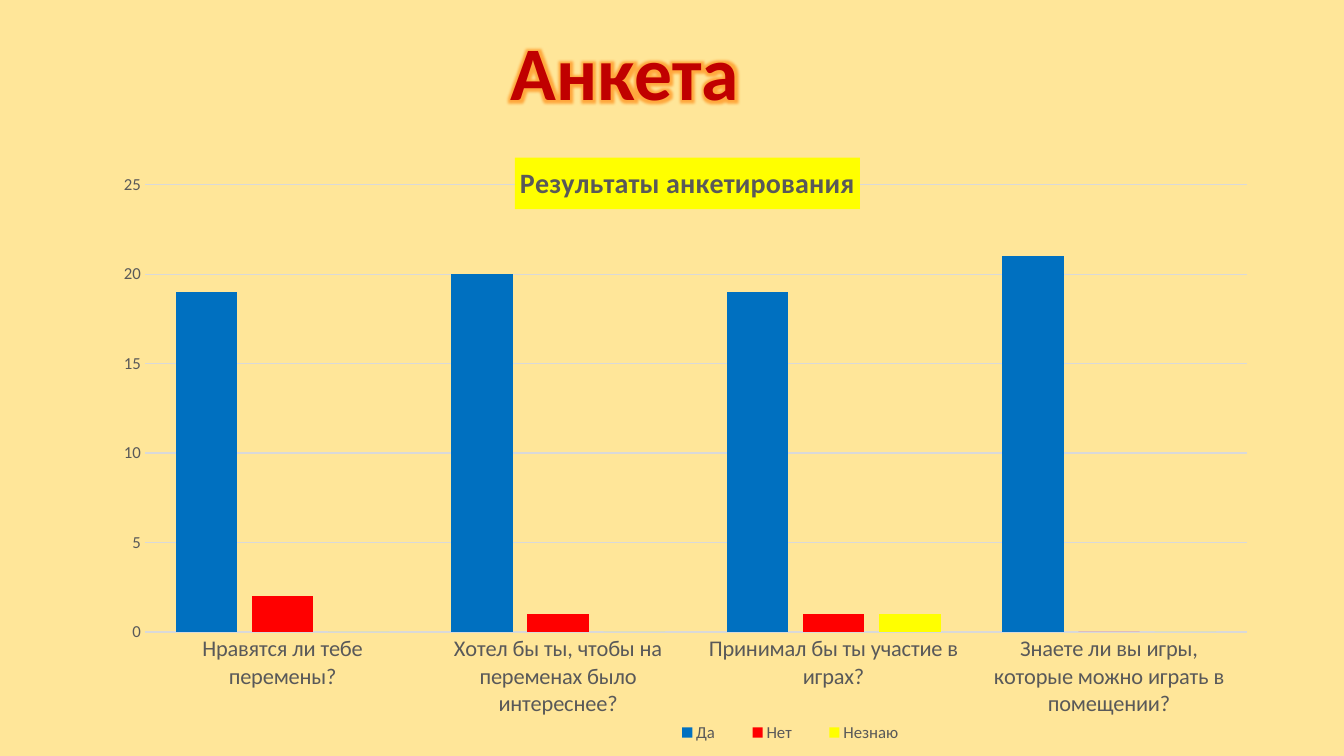
from dataclasses import dataclass

from lxml.etree import Element, SubElement
from pptx import Presentation
from pptx.chart.chart import Chart
from pptx.chart.data import CategoryChartData
from pptx.dml.color import RGBColor
from pptx.enum.chart import XL_CHART_TYPE as ChartType
from pptx.enum.chart import XL_LEGEND_POSITION as LegendPosition
from pptx.enum.chart import XL_TICK_MARK as TickMark
from pptx.enum.text import MSO_ANCHOR as Anchor
from pptx.enum.text import MSO_AUTO_SIZE as AutoSize
from pptx.enum.text import PP_ALIGN as Align
from pptx.oxml import parse_xml
from pptx.oxml.ns import nsdecls, qn
from pptx.slide import Slide
from pptx.util import Pt

FONT = "Calibri"
GREY = "595959"
RULE = "D9D9D9"


@dataclass
class Answer:
    name: str
    votes: tuple[int, ...]
    color: str


@dataclass
class Frame:
    left: float
    top: float
    width: float | None = None
    height: float | None = None
    inner: bool = False


QUESTIONS = (
    "Нравятся ли тебе перемены?",
    "Хотел бы ты, чтобы на переменах было интереснее?",
    "Принимал бы ты участие в играх?",
    "Знаете ли вы игры, которые можно играть в помещении?",
)
ANSWERS = (
    Answer("Да", (19, 20, 19, 21), "0070C0"),
    Answer("Нет", (2, 1, 1, 0), "FF0000"),
    Answer("Незнаю", (0, 0, 1, 0), "FFFF00"),
)


def paint(fill, color: str) -> None:
    fill.solid()
    fill.fore_color.rgb = RGBColor.from_string(color)


def set_font(font, size: float, color: str, bold: bool = False) -> None:
    font.name = FONT
    font.size = Pt(size)
    font.bold = bold
    font.color.rgb = RGBColor.from_string(color)


def set_line(line, color: str, width: float) -> None:
    paint(line.fill, color)
    line.width = Pt(width)


def set_layout(parent, index: int, frame: Frame) -> None:
    for old in parent.findall(qn("c:layout")):
        parent.remove(old)
    layout = Element(qn("c:layout"))
    manual = SubElement(layout, qn("c:manualLayout"))
    entries = {"xMode": "edge", "yMode": "edge", "x": frame.left, "y": frame.top}
    if frame.inner:
        entries = {"layoutTarget": "inner", **entries}
    if frame.width is not None:
        entries |= {"w": frame.width, "h": frame.height}
    for tag, value in entries.items():
        SubElement(manual, qn(f"c:{tag}")).set("val", str(value))
    parent.insert(index, layout)


def add_heading(page: Slide) -> None:
    box = page.shapes.title
    box.left, box.top, box.width, box.height = Pt(121.7), Pt(14.4), Pt(649.4), Pt(72.7)
    frame = box.text_frame
    frame.word_wrap = False
    frame.auto_size = AutoSize.SHAPE_TO_FIT_TEXT
    frame.vertical_anchor = Anchor.TOP
    para = frame.paragraphs[0]
    para.alignment = Align.CENTER
    para.line_spacing = 1.0
    span = para.add_run()
    span.text = "Анкета"
    set_font(span.font, 54, "C00000", bold=True)
    properties = span.font._element
    outline = parse_xml(
        f'<a:ln {nsdecls("a")} w="9525"><a:solidFill>'
        '<a:srgbClr val="FFFFFF"/></a:solidFill></a:ln>'
    )
    glow = parse_xml(
        f'<a:effectLst {nsdecls("a")}><a:glow rad="101600">'
        '<a:srgbClr val="FF8000"><a:alpha val="60000"/></a:srgbClr>'
        "</a:glow></a:effectLst>"
    )
    properties.insert(0, outline)
    properties.find(qn("a:solidFill")).addnext(glow)


def add_survey(page: Slide) -> Chart:
    data = CategoryChartData()
    data.categories = QUESTIONS
    for answer in ANSWERS:
        data.add_series(answer.name, answer.votes)
    chart = page.shapes.add_chart(
        ChartType.COLUMN_CLUSTERED, Pt(78.5), Pt(99.4), Pt(833.8), Pt(440.6), data
    ).chart
    set_font(chart.font, 10, "000000")
    plot = chart.plots[0]
    plot.gap_width = 100
    plot.overlap = -24
    plot.vary_by_categories = False
    for series, answer in zip(plot.series, ANSWERS):
        paint(series.format.fill, answer.color)
        series.invert_if_negative = False
    set_layout(plot._element.getparent(), 0, Frame(0.03, 0.074, 0.944, 0.725, True))
    return chart


def format_axes(chart: Chart) -> None:
    for axis, size in ((chart.category_axis, 16), (chart.value_axis, 12)):
        set_font(axis.tick_labels.font, size, GREY)
        axis.major_tick_mark = TickMark.NONE
        axis.minor_tick_mark = TickMark.NONE
    set_line(chart.category_axis.format.line, RULE, 1)
    votes = chart.value_axis
    votes.minimum_scale, votes.maximum_scale, votes.major_unit = 0, 25, 5
    votes.format.line.fill.background()
    votes.has_major_gridlines = True
    set_line(votes.major_gridlines.format.line, RULE, 0.75)


def add_captions(chart: Chart) -> None:
    chart.has_title = True
    title = chart.chart_title
    title.text_frame.text = "Результаты анкетирования"
    set_font(title.text_frame.paragraphs[0].font, 20, GREY, bold=True)
    paint(title.format.fill, "FFFF00")
    set_layout(title._element, 1, Frame(0.347, 0.03))
    chart.has_legend = True
    legend = chart.legend
    legend.position = LegendPosition.BOTTOM
    legend.include_in_layout = False
    set_font(legend.font, 12, GREY)
    set_layout(legend._element, 1, Frame(0.463, 0.937, 0.24, 0.05))


def main() -> None:
    deck = Presentation()
    deck.slide_width, deck.slide_height = Pt(960), Pt(540)
    page = deck.slides.add_slide(deck.slide_layouts[5])
    paint(page.background.fill, "FFE699")
    add_heading(page)
    chart = add_survey(page)
    format_axes(chart)
    add_captions(chart)
    deck.save("out.pptx")


if __name__ == "__main__":
    main()
